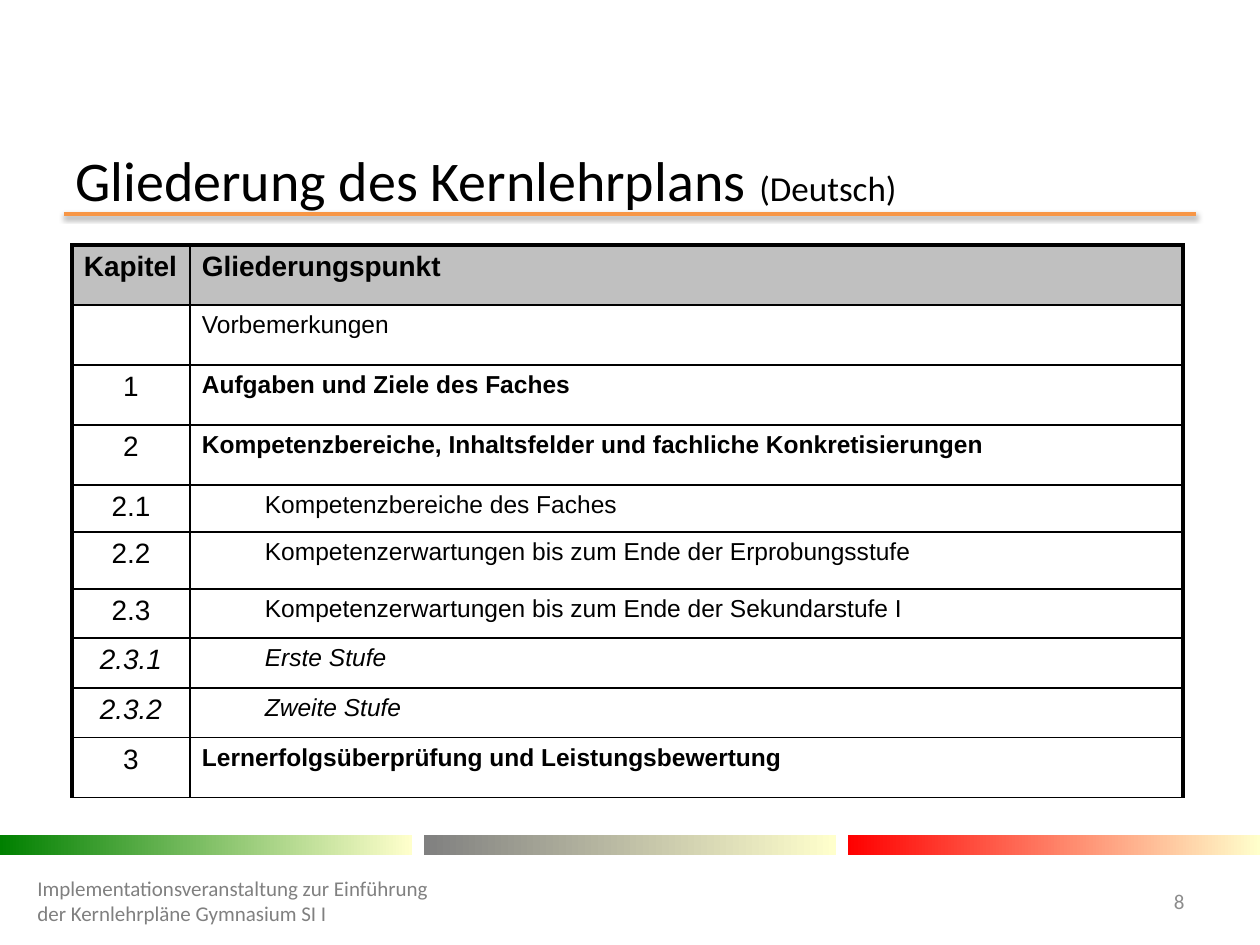
from dataclasses import dataclass

from lxml import etree
from pptx import Presentation
from pptx.dml.color import RGBColor
from pptx.enum import shapes, text
from pptx.oxml import ns
from pptx.util import Pt

PX_PER_INCH = 126


def px(length):
    return round(length * 914400 / PX_PER_INCH)


@dataclass(frozen=True)
class Theme:
    ink: str = "000000"
    accent: str = "F79646"
    header: str = "C0C0C0"
    footer: str = "808080"
    number: str = "8C8C8C"
    pale: str = "FFFFCC"
    green: str = "008000"
    gray: str = "808080"
    red: str = "FF0000"
    heading_font: str = "Calibri"
    table_font: str = "Arial"
    title: int = 32
    subtitle: int = 20
    chapter: int = 16
    topic: int = 14
    small: int = 12
    thin: float = 1
    thick: float = 2.25


THEME = Theme()

# Chapter, topic, row height, style of the row
OUTLINE = [
    ("Kapitel", "Gliederungspunkt", 60, "header"),
    ("", "Vorbemerkungen", 60, "plain"),
    ("1", "Aufgaben und Ziele des Faches", 60, "main"),
    ("2", "Kompetenzbereiche, Inhaltsfelder und fachliche Konkretisierungen", 60, "main"),
    ("2.1", "Kompetenzbereiche des Faches", 47, "sub"),
    ("2.2", "Kompetenzerwartungen bis zum Ende der Erprobungsstufe", 57, "sub"),
    ("2.3", "Kompetenzerwartungen bis zum Ende der Sekundarstufe I", 49, "sub"),
    ("2.3.1", "Erste Stufe", 50, "stage"),
    ("2.3.2", "Zweite Stufe", 50, "stage"),
    ("3", "Lernerfolgsüberprüfung und Leistungsbewertung", 60, "main"),
]


def add_run(paragraph, words, size, font, color, **style):
    run = paragraph.add_run()
    run.text = words
    run.font.color.rgb = RGBColor.from_string(color)
    for name, value in {"size": Pt(size), "name": font, **style}.items():
        setattr(run.font, name, value)


def add_text(slide, box, runs, align=text.PP_ALIGN.LEFT):
    frame = slide.shapes.add_textbox(*map(px, box)).text_frame
    frame.word_wrap = True
    frame.vertical_anchor = text.MSO_ANCHOR.MIDDLE
    paragraph = frame.paragraphs[0]
    paragraph.alignment = align
    for words, size, color in runs:
        add_run(paragraph, words, size, THEME.heading_font, color)


def add_title(slide, box):
    left, top, width, height = box
    # Rule with a soft shadow below the heading
    rule = slide.shapes.add_connector(
        shapes.MSO_CONNECTOR.STRAIGHT,
        *map(px, (left, top + height, left + width, top + height)))
    rule.line.color.rgb = RGBColor.from_string(THEME.accent)
    rule.line.width = Pt(2)
    effects = etree.SubElement(rule._element.spPr, ns.qn("a:effectLst"))
    shadow = etree.SubElement(effects, ns.qn("a:outerShdw"), blurRad=str(Pt(3.1)),
                              dist=str(Pt(1.6)), dir="5400000", rotWithShape="0")
    black = etree.SubElement(shadow, ns.qn("a:srgbClr"), val=THEME.ink)
    etree.SubElement(black, ns.qn("a:alpha"), val="38000")

    add_text(slide, (left - 1, top, width + 2, height - 10),
             [("Gliederung des Kernlehrplans ", THEME.title, THEME.ink),
              ("(Deutsch)", THEME.subtitle, THEME.ink)])


def add_borders(cell, widths):
    properties = cell._tc.get_or_add_tcPr()
    for side, width in widths.items():
        line = etree.SubElement(properties, ns.qn(f"a:ln{side}"), w=str(Pt(width)))
        fill = etree.SubElement(line, ns.qn("a:solidFill"))
        etree.SubElement(fill, ns.qn("a:srgbClr"), val=THEME.ink)


def add_outline(slide, box):
    left, top, width, _ = box
    chapter_width = 118
    heights = [row[2] for row in OUTLINE]
    table = slide.shapes.add_table(
        len(OUTLINE), 2, *map(px, (left, top, width, sum(heights)))).table
    table.columns[0].width = px(chapter_width)
    table.columns[1].width = px(width - chapter_width)

    for r, (chapter, topic, height, kind) in enumerate(OUTLINE):
        table.rows[r].height = px(height)
        header = kind == "header"
        for c, words in enumerate((chapter, topic)):
            cell = table.cell(r, c)
            cell.margin_left = cell.margin_right = px(12)
            # Heavy outer frame, thin inner lines
            add_borders(cell, {
                "L": THEME.thin if c else THEME.thick,
                "R": THEME.thick if c else THEME.thin,
                "T": THEME.thick if header else THEME.thin,
                "B": THEME.thin,
            })
            if header:
                cell.fill.solid()
                cell.fill.fore_color.rgb = RGBColor.from_string(THEME.header)
            else:
                cell.fill.background()

            paragraph = cell.text_frame.paragraphs[0]
            if c == 0 and not header:
                paragraph.alignment = text.PP_ALIGN.CENTER
            if c == 1 and kind in ("sub", "stage"):
                indent = paragraph._p.get_or_add_pPr()
                for name, value in {"marL": px(63), "indent": 0, "lvl": 1}.items():
                    indent.set(name, str(value))
            if words:
                add_run(paragraph, words,
                        THEME.topic if c and not header else THEME.chapter,
                        THEME.table_font, THEME.ink,
                        bold=header or (c == 1 and kind == "main"),
                        italic=kind == "stage")


def add_bands(slide, box):
    left, top, width, height = box
    band_width = 412
    step = (width - band_width) / 2
    for i, color in enumerate((THEME.green, THEME.gray, THEME.red)):
        band = slide.shapes.add_shape(
            shapes.MSO_SHAPE.RECTANGLE,
            *map(px, (left + i * step, top, band_width, height)))
        band.shadow.inherit = False
        band.line.fill.background()
        band.fill.gradient()
        band.fill.gradient_angle = 0
        for stop, shade in zip(band.fill.gradient_stops, (color, THEME.pale)):
            stop.color.rgb = RGBColor.from_string(shade)


def add_footer(slide, box):
    left, top, width, height = box
    number_width = 81
    add_text(slide, (left, top, 417, height),
             [("Implementationsveranstaltung zur Einführung der Kernlehrpläne "
               "Gymnasium SI I", THEME.small, THEME.footer)])
    add_text(slide, (left + width - number_width, top, number_width, height),
             [("8", THEME.small, THEME.number)], text.PP_ALIGN.RIGHT)


def main():
    deck = Presentation()
    deck.slide_width, deck.slide_height = px(1260), px(945)
    slide = deck.slides.add_slide(deck.slide_layouts[6])
    add_title(slide, (64, 155, 1132, 59))
    add_bands(slide, (0, 835, 1260, 20))
    add_footer(slide, (25, 876, 1172, 50))
    add_outline(slide, (72, 245, 1111, 553))
    deck.save("out.pptx")


if __name__ == "__main__":
    main()
